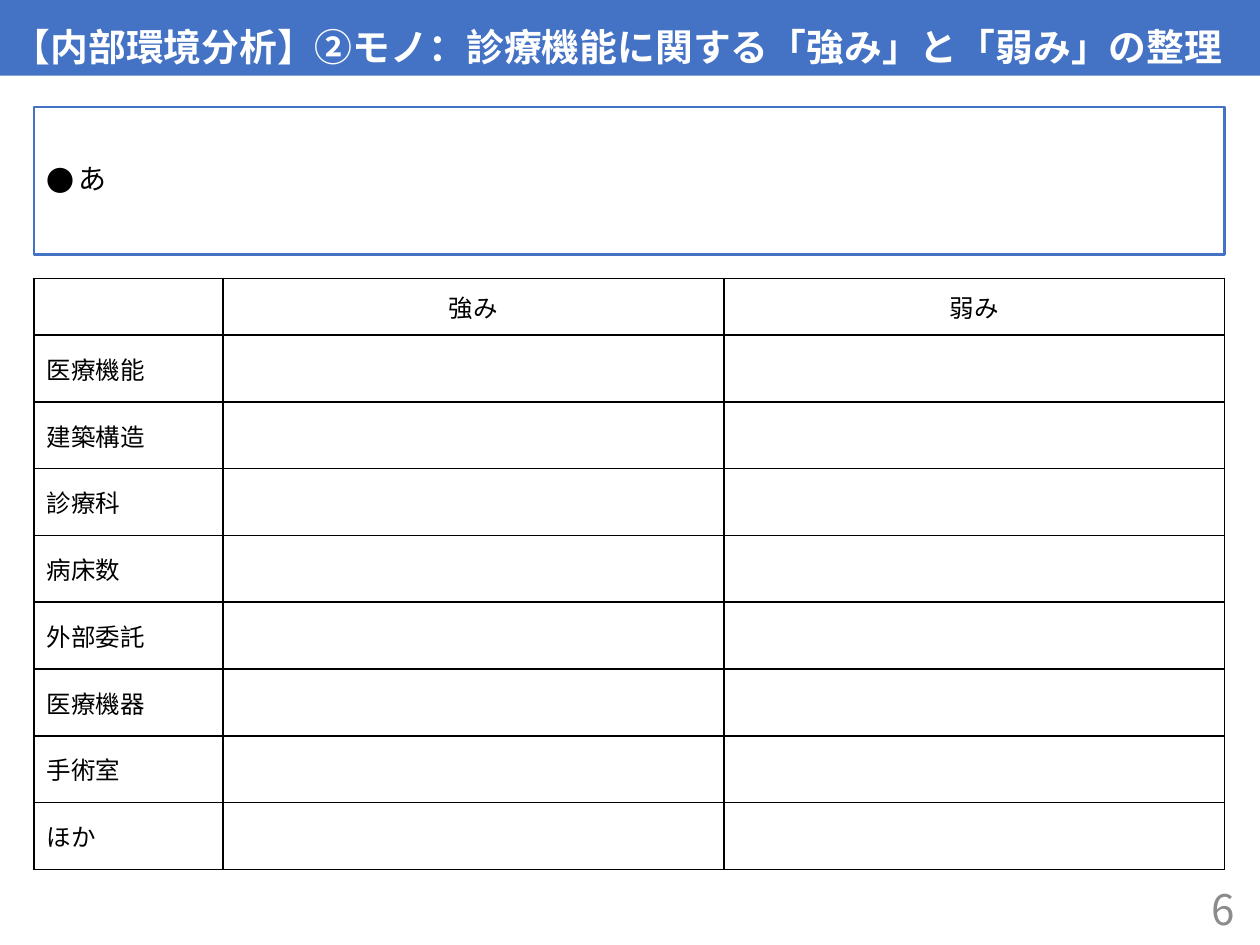
from dataclasses import dataclass

from lxml import etree
from pptx import Presentation
from pptx.dml.color import RGBColor
from pptx.enum.text import MSO_ANCHOR, MSO_AUTO_SIZE, PP_ALIGN
from pptx.oxml.ns import qn
from pptx.util import Pt

LEFT, CENTER, RIGHT = PP_ALIGN.LEFT, PP_ALIGN.CENTER, PP_ALIGN.RIGHT
MIDDLE, BOTTOM = MSO_ANCHOR.MIDDLE, MSO_ANCHOR.BOTTOM
NO_FIT = MSO_AUTO_SIZE.NONE


@dataclass(frozen=True)
class Theme:
    font: str = "Noto Sans CJK JP"
    blue: str = "4472C4"
    white: str = "FFFFFF"
    black: str = "000000"
    gray: str = "8C8C8C"
    title: float = 21.6
    body: float = 16
    cell: float = 14
    page: float = 24


@dataclass(frozen=True)
class Box:
    left: float
    top: float
    width: float
    height: float


THEME = Theme()
TITLE = Box(0, 0, 720, 43.2)
BODY = Box(19.44, 61.2, 680.4, 84.24)
GRID = Box(19.44, 159.12, 680.4, 337.68)
PAGE = Box(550.8, 504.72, 162, 28.8)

HEADS = ("", "強み", "弱み")
TOPICS = ("医療機能", "建築構造", "診療科", "病床数",
          "外部委託", "医療機器", "手術室", "ほか")
LABEL_W, HEAD_H = 108, 32.4


def place(shape, box: Box) -> None:
    shape.left, shape.top = Pt(box.left), Pt(box.top)
    shape.width, shape.height = Pt(box.width), Pt(box.height)


def write(frame, text: str, size: float, color: str,
          align=LEFT, bold: bool = False):
    """Set one styled paragraph and return it."""
    frame.text = text
    para = frame.paragraphs[0]
    para.alignment = align
    for run in para.runs:
        font = run.font
        font.name, font.size, font.bold = THEME.font, Pt(size), bold
        font.color.rgb = RGBColor.from_string(color)
        east = etree.SubElement(font._element, qn("a:ea"))
        east.set("typeface", THEME.font)
    return para


def setup(frame, anchor) -> None:
    frame.word_wrap = True
    frame.auto_size = NO_FIT
    frame.vertical_anchor = anchor


def fill(shape, color: str) -> None:
    shape.fill.solid()
    shape.fill.fore_color.rgb = RGBColor.from_string(color)


def add_bullet(para, mark: str, indent: float) -> None:
    props = para._p.get_or_add_pPr()
    props.set("marL", str(Pt(indent)))
    props.set("indent", str(-Pt(indent)))
    etree.SubElement(props, qn("a:buFont")).set("typeface", THEME.font)
    etree.SubElement(props, qn("a:buChar")).set("char", mark)


def add_border(cell, color: str, width: float) -> None:
    props = cell._tc.get_or_add_tcPr()
    for side in ("lnL", "lnR", "lnT", "lnB"):
        line = etree.SubElement(props, qn(f"a:{side}"), w=str(Pt(width)))
        paint = etree.SubElement(line, qn("a:solidFill"))
        etree.SubElement(paint, qn("a:srgbClr"), val=color)


def add_title(slide) -> None:
    title = slide.shapes.title
    place(title, TITLE)
    fill(title, THEME.blue)
    setup(title.text_frame, BOTTOM)
    para = write(title.text_frame,
                 "【内部環境分析】②モノ：診療機能に関する「強み」と「弱み」の整理",
                 THEME.title, THEME.white, bold=True)
    para.line_spacing = 0.9


def add_body(slide) -> None:
    body = slide.placeholders[1]
    place(body, BODY)
    fill(body, THEME.white)
    body.line.color.rgb = RGBColor.from_string(THEME.blue)
    body.line.width = Pt(1.5)
    setup(body.text_frame, MIDDLE)
    para = write(body.text_frame, "あ", THEME.body, THEME.black)
    para.line_spacing, para.space_before = 0.9, Pt(10)
    add_bullet(para, "●", 18)


def add_grid(slide) -> None:
    rows = [HEADS] + [(topic, "", "") for topic in TOPICS]
    frame = slide.shapes.add_table(
        len(rows), len(HEADS), Pt(GRID.left), Pt(GRID.top),
        Pt(GRID.width), Pt(GRID.height))
    table = frame.table
    wide = (GRID.width - LABEL_W) / (len(HEADS) - 1)
    high = (GRID.height - HEAD_H) / len(TOPICS)
    for c, col in enumerate(table.columns):
        col.width = Pt(wide if c else LABEL_W)
    for r, texts in enumerate(rows):
        table.rows[r].height = Pt(high if r else HEAD_H)
        for c, text in enumerate(texts):
            cell = table.cell(r, c)
            cell.vertical_anchor = MIDDLE
            add_border(cell, THEME.black, 1)
            fill(cell, THEME.white)
            write(cell.text_frame, text, THEME.cell, THEME.black,
                  LEFT if r else CENTER)


def add_page(slide) -> None:
    box = slide.shapes.add_textbox(0, 0, 0, 0)
    place(box, PAGE)
    setup(box.text_frame, MIDDLE)
    write(box.text_frame, "6", THEME.page, THEME.gray, RIGHT)


def main() -> None:
    deck = Presentation()
    deck.slide_width, deck.slide_height = Pt(720), Pt(540)
    slide = deck.slides.add_slide(deck.slide_layouts[1])
    add_title(slide)
    add_page(slide)
    add_body(slide)
    add_grid(slide)
    deck.save("out.pptx")


if __name__ == "__main__":
    main()
